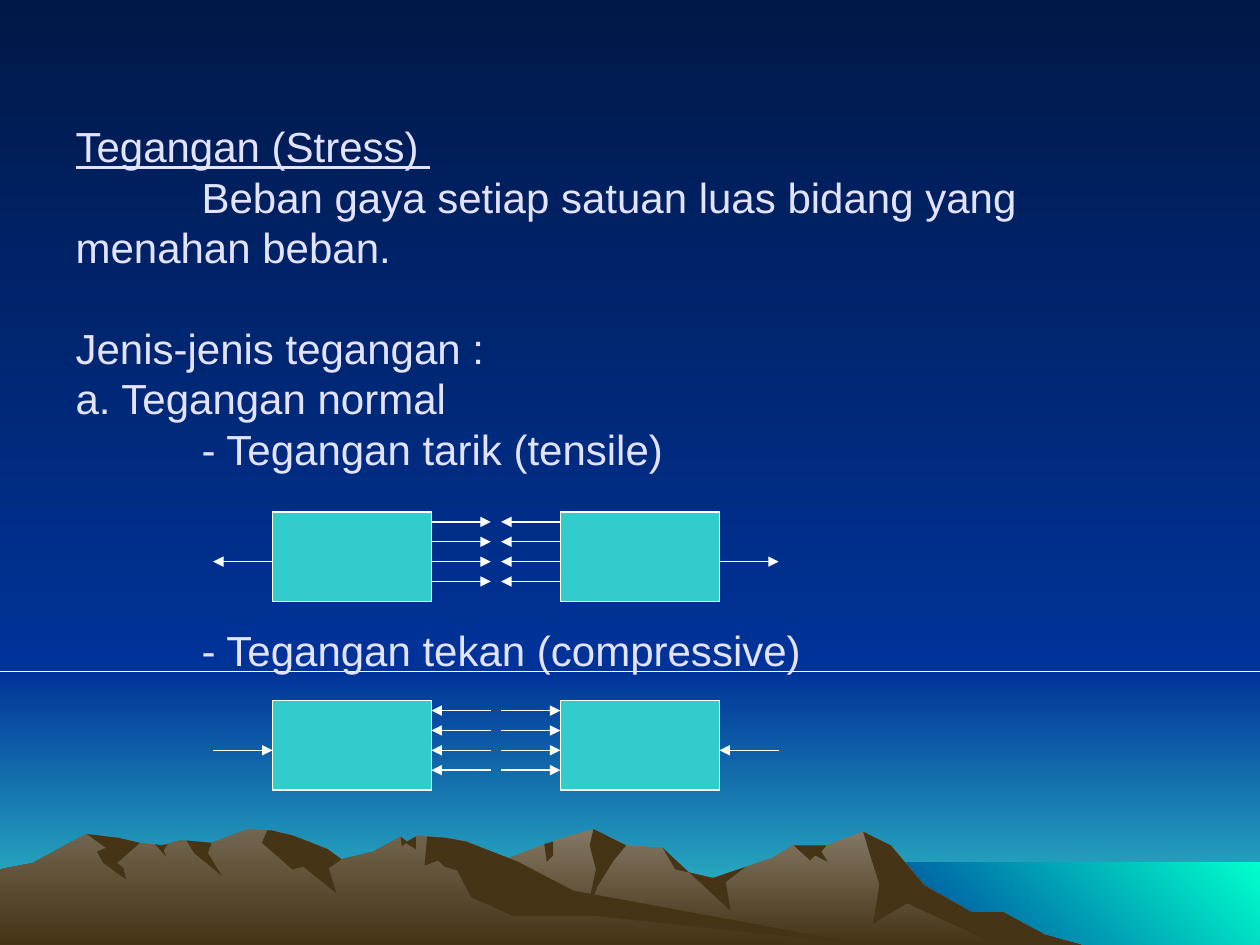
from dataclasses import dataclass
from itertools import pairwise
from lxml.etree import SubElement
from pptx import Presentation
from pptx.dml.color import RGBColor
from pptx.enum.shapes import MSO_CONNECTOR, MSO_SHAPE
from pptx.oxml.ns import qn
from pptx.util import Inches, Pt

NIGHT = RGBColor(0x00, 0x18, 0x47)
BLUE = RGBColor(0x00, 0x33, 0x99)
TEAL = RGBColor(0x33, 0xCC, 0xCC)
AQUA = RGBColor(0x00, 0xFF, 0xCC)
BROWN = RGBColor(0x46, 0x34, 0x16)
FAR_ROCK = RGBColor(0x84, 0x78, 0x64)
NEAR_ROCK = RGBColor(0x73, 0x66, 0x50)
LAVENDER = RGBColor(0xE3, 0xE3, 0xFF)
WHITE = RGBColor(0xFF, 0xFF, 0xFF)

COLUMNS, ROWS = 1000, 750
HORIZON, SEA_LEFT, SEA_TOP = 533, 683, 684.5
DOWNWARD, UP_RIGHT = 270, 45
TAB = 100
LINE_PITCH = 28.8
FONT = {"name": "Arial", "size": Pt(24), "bold": False}
NO_MARGINS = dict.fromkeys(("margin_left", "margin_top", "margin_right", "margin_bottom"), 0)
FRAME = {"word_wrap": True, **NO_MARGINS}

BLOCK_WIDTH, BLOCK_HEIGHT = 126.25, 71
LEFT_BLOCK, RIGHT_BLOCK = 216.25, 444.75
TENSILE_TOP, COMPRESSIVE_TOP = 406.25, 556
ARROW_LENGTH, ARROW_INSET, ARROW_PITCH = 47, 8, 15.75
INNER_ARROWS, OUTER_ARROWS = (0, 1, 2, 3), (2,)

TEXT = [
    ("Tegangan (Stress) ", 0, 0, {"underline": True}),
    ("Beban gaya setiap satuan luas bidang yang menahan beban.", TAB, 0, {}),
    ("Jenis-jenis tegangan :", 0, 1, {}),
    ("a. Tegangan normal", 0, 0, {}),
    ("- Tegangan tarik (tensile)", TAB, 0, {}),
    ("- Tegangan tekan (compressive)", TAB, 3, {})]


@dataclass
class MountainRange:
    """Skyline heights by column, and shadows that hang from parts of that skyline."""

    rock: RGBColor
    skyline: dict
    shadows: dict

    def height_at(self, column):
        for (left, low), (right, high) in pairwise(self.skyline.items()):
            if left <= column <= right:
                return low + (high - low) * (column - left) / (right - left)

    def crest(self, start, end):
        between = [column for column in self.skyline if start < column < end]
        return [(column, self.height_at(column)) for column in (start, *between, end)]

    def body(self):
        first, *_, last = self.skyline
        return [(first, 0), *self.crest(first, last), (last, 0)]

    def shaded_faces(self):
        return [self.crest(*span) + foot for span, foot in self.shadows.values()]


FAR_RANGE = MountainRange(
    FAR_ROCK,
    {258: 0, 327: 41, 355: 52, 394: 65, 430: 79, 450: 86, 471: 92, 497: 79, 526: 77,
     536: 60, 566: 53, 613: 69, 629: 79, 656: 79, 685: 90, 707: 79, 734: 47, 771: 26,
     796: 26, 829: 8, 858: 0},
    {"notch": ((432, 439), [(439, 71), (434, 66)]),
     "summit gully": ((471, 497), [(487, 67), (474, 46), (465, 23), (473, 60), (468, 79)]),
     "saddle": ((526, 592), [(576, 50), (580, 27)]),
     "shoulder": ((630, 656), [(652, 74), (657, 66), (647, 71), (643, 67)]),
     "east face": ((685, 858), [(792, 0), (720, 33), (693, 17), (698, 48), (691, 70)])})

NEAR_RANGE = MountainRange(
    NEAR_ROCK,
    {0: 60, 26: 65, 46: 76, 68: 88, 94: 85, 111: 81, 128: 79, 143: 83, 168: 81, 196: 92,
     215: 91, 232: 87, 245: 82, 260: 76, 271: 68, 296: 74, 318: 86, 323: 82, 331: 87,
     354: 85, 370: 82, 411: 66, 455: 43, 690: 0},
    {"west gully": ((69, 111), [(93, 65), (98, 61), (100, 52), (82, 65), (77, 74), (84, 77)]),
     "small notch": ((123, 133), [(130, 75), (132, 70)]),
     "middle gully": ((148, 168), [(165, 73), (176, 55), (154, 73)]),
     "summit face": ((212, 271), [(261, 61), (267, 41), (241, 62), (232, 60), (208, 81)]),
     "east notch": ((318, 330), [(330, 76), (322, 81), (319, 78)]),
     "long slope": ((339, 690), [(472, 23), (407, 23), (374, 38), (363, 59), (353, 62),
                                 (348, 67), (337, 63)])})


class SlideBuilder:
    """Draws styled elements on one slide, measured in grid columns and rows."""

    def __init__(self, deck):
        self.page = deck.slides.add_slide(deck.slide_layouts[6])
        self.column = deck.slide_width / COLUMNS
        self.row = deck.slide_height / ROWS

    def place(self, *lengths):
        units = (self.column, self.row) * 2
        return [round(length * unit) for length, unit in zip(lengths, units)]

    def paint(self, shape, colors, angle=DOWNWARD):
        shape.shadow.inherit = False
        if len(colors) == 1:
            shape.fill.solid()
            shape.fill.fore_color.rgb = colors[0]
            return
        shape.fill.gradient()
        shape.fill.gradient_angle = angle
        for stop, color in zip(shape.fill.gradient_stops, colors):
            stop.color.rgb = color

    def stroke(self, line):
        line.color.rgb = WHITE
        line.width = Pt(0.75)

    def panel(self, left, top, right, bottom, *colors, angle=DOWNWARD):
        area = self.place(left, top, right - left, bottom - top)
        shape = self.page.shapes.add_shape(MSO_SHAPE.RECTANGLE, *area)
        self.paint(shape, colors, angle)
        shape.line.fill.background()

    def silhouette(self, profile, *colors):
        start, *others = [(column, ROWS - height) for column, height in profile]
        builder = self.page.shapes.build_freeform(*start, scale=(self.column, self.row))
        builder.add_line_segments(others, close=True)
        shape = builder.convert_to_shape()
        self.paint(shape, colors)
        shape.line.fill.background()

    def mountains(self, mountain_range):
        self.silhouette(mountain_range.body(), mountain_range.rock, BROWN)
        for face in mountain_range.shaded_faces():
            self.silhouette(face, BROWN)

    def block(self, left, top):
        area = self.place(left, top, BLOCK_WIDTH, BLOCK_HEIGHT)
        shape = self.page.shapes.add_shape(MSO_SHAPE.RECTANGLE, *area)
        self.paint(shape, [TEAL])
        self.stroke(shape.line)

    def arrow(self, start, end, height):
        ends = self.place(start, height, end, height)
        arrow = self.page.shapes.add_connector(MSO_CONNECTOR.STRAIGHT, *ends)
        self.stroke(arrow.line)
        properties = arrow._element.spPr
        SubElement(properties.find(qn("a:ln")), qn("a:tailEnd"), type="triangle")
        SubElement(properties, qn("a:effectLst"))

    def face_arrows(self, face, direction, top, indexes, pulling):
        tip = face + direction * ARROW_LENGTH
        start, end = (face, tip) if pulling else (tip, face)
        for index in indexes:
            self.arrow(start, end, top + ARROW_INSET + index * ARROW_PITCH)

    def stress_pair(self, top, pulling):
        for left, inward in ((LEFT_BLOCK, 1), (RIGHT_BLOCK, -1)):
            self.block(left, top)
            for face, direction in ((left, -1), (left + BLOCK_WIDTH, 1)):
                indexes = INNER_ARROWS if direction == inward else OUTER_ARROWS
                self.face_arrows(face, direction, top, indexes, pulling)

    def text(self, left, top, width, height, lines):
        box = self.page.shapes.add_textbox(*self.place(left, top, width, height))
        frame = box.text_frame
        for name, value in FRAME.items():
            setattr(frame, name, value)
        for index, (words, indent, gap, extra) in enumerate(lines):
            para = frame.add_paragraph() if index else frame.paragraphs[0]
            para.line_spacing = Pt(LINE_PITCH)
            para.space_before = Pt(gap * LINE_PITCH)
            para._p.get_or_add_pPr().set("indent", str(round(indent * self.column)))
            span = para.add_run()
            span.text = words
            span.font.color.rgb = LAVENDER
            for name, value in {**FONT, **extra}.items():
                setattr(span.font, name, value)


def main():
    deck = Presentation()
    deck.slide_width, deck.slide_height = Inches(10), Inches(7.5)
    slide = SlideBuilder(deck)
    slide.panel(0, HORIZON, COLUMNS, ROWS, BLUE, TEAL)
    slide.panel(0, 0, COLUMNS, HORIZON, NIGHT, BLUE)
    slide.panel(SEA_LEFT, SEA_TOP, COLUMNS, ROWS, BLUE, AQUA, angle=UP_RIGHT)
    slide.mountains(FAR_RANGE)
    slide.mountains(NEAR_RANGE)
    slide.text(60, 96, 880, 440, TEXT)
    slide.stress_pair(TENSILE_TOP, pulling=True)
    slide.stress_pair(COMPRESSIVE_TOP, pulling=False)
    deck.save("out.pptx")


if __name__ == "__main__":
    main()
